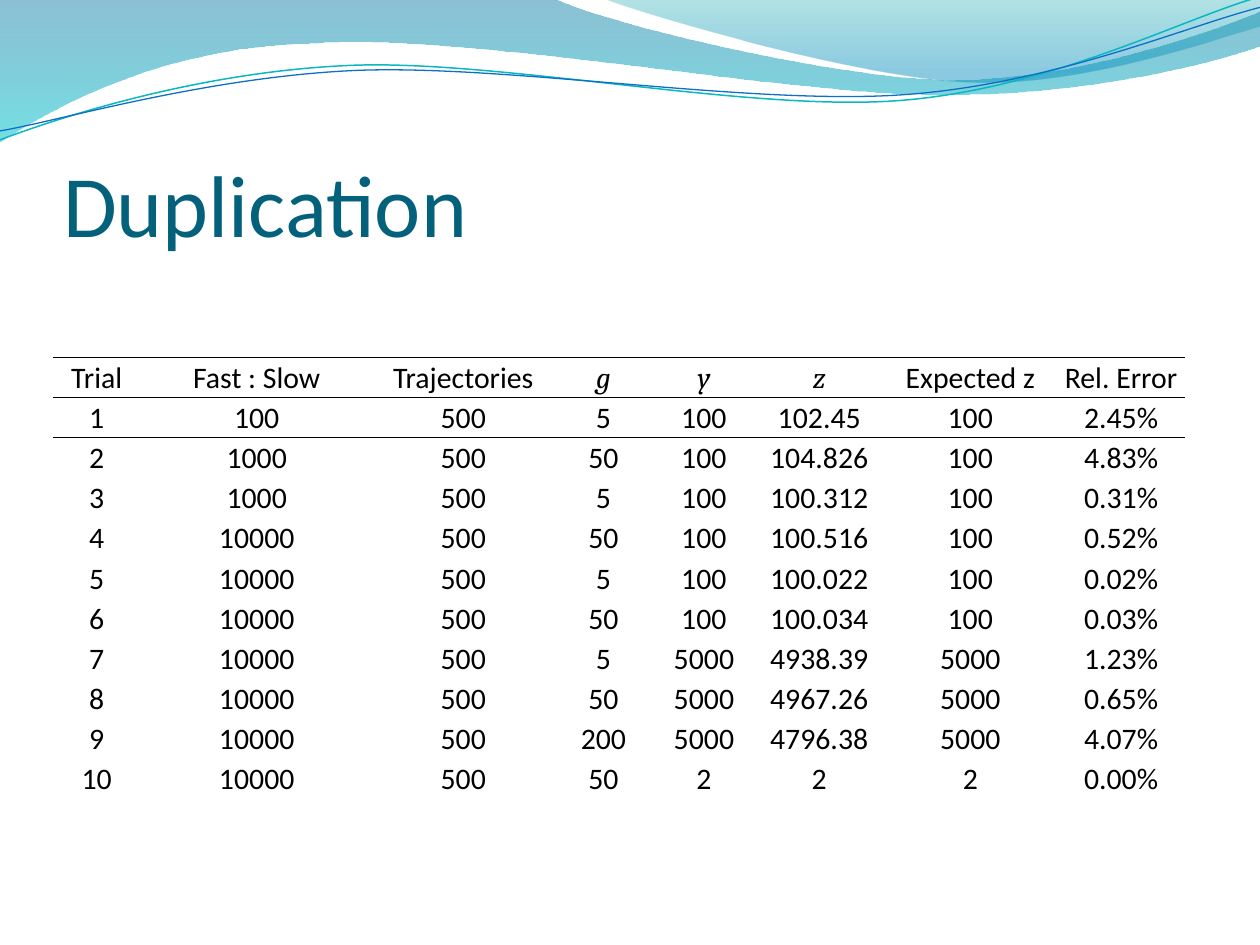
from dataclasses import dataclass

from lxml.etree import SubElement
from pptx import Presentation
from pptx.dml.color import RGBColor
from pptx.enum.text import MSO_ANCHOR, MSO_AUTO_SIZE, PP_ALIGN
from pptx.oxml.ns import qn
from pptx.util import Cm, Pt


@dataclass(frozen=True)
class Theme:
    title_color: str = "04617B"
    text_color: str = "000000"
    teal_line: str = "0AB8BF"
    blue_line: str = "0F6FC6"
    # Gradient stops: position, colour, opacity in percent
    band_stops: tuple = ((0, "0074A1", 45), (1, "00C6CF", 55))
    crest_stops: tuple = ((0, "00A1A9", 30), (0.8, "008BBF", 45))
    body_font: str = "Calibri"
    symbol_font: str = "Cambria"
    title_size: float = 50
    table_size: float = 17
    rule_width: float = 0.5


theme = Theme()
PLAIN_TABLE_STYLE = "{2D5ABB26-0587-4C30-8999-92F81FD0307C}"


def write(frame, text, *, size, color, font=theme.body_font, italic=False,
          align=PP_ALIGN.LEFT):
    para = frame.paragraphs[0]
    para.alignment = align
    span = para.add_run()
    span.text = text
    span.font.name = font
    span.font.size = Pt(size)
    span.font.bold = False
    span.font.italic = italic
    span.font.color.rgb = RGBColor.from_string(color)


def add_wave(page, start, segments, close):
    """Draw segments given in cm: two numbers make a line, six a cubic curve."""
    builder = page.shapes.build_freeform(Cm(start[0]), Cm(start[1]))
    for segment in segments:
        points = zip(segment[::2], segment[1::2])
        builder.add_line_segments([(Cm(x), Cm(y)) for x, y in points], close=False)
    if close:
        builder.add_line_segments([], close=True)
    wave = builder.convert_to_shape()
    wave.shadow.inherit = False

    # Merge each group of three points into one cubic curve
    outline = next(wave.element.iter(qn("a:path")))
    steps = iter(outline.findall(qn("a:lnTo")))
    for segment in segments:
        group = [next(steps) for _ in range(len(segment) // 2)]
        if len(group) == 3:
            curve = outline.makeelement(qn("a:cubicBezTo"))
            group[0].addprevious(curve)
            for step in group:
                curve.append(step[0])
                outline.remove(step)
    return wave


deck = Presentation()
deck.slide_width, deck.slide_height = Cm(25.4), Cm(19.05)
page = deck.slides.add_slide(deck.slide_layouts[5])

# Filled waves along the top
filled_waves = [
    (theme.band_stops, (0, 0), [
        (11.18, -0.03),
        (12.09, 0.43, 16.87, 1.6, 19.25, 1.6),
        (21.67, 1.6, 24.33, 0.66, 25.4, 0.23),
        (25.43, 0.91),
        (24.97, 1.12, 22.1, 1.93, 18.95, 1.91),
        (15.8, 1.91, 9.7, 0.71, 6.53, 0.86),
        (3.28, 0.91, 1.17, 2.11, -0.03, 2.87),
    ]),
    (theme.crest_stops, (12.17, -0.03), [
        (12.93, 0.28, 17.32, 1.57, 19.53, 1.65),
        (21.74, 1.75, 24.41, 0.81, 25.4, 0.53),
        (25.4, 0),
    ]),
]
waves = []
for stops, start, segments in filled_waves:
    wave = add_wave(page, start, segments, close=True)
    wave.line.fill.background()
    wave.fill.gradient()
    wave.fill.gradient_angle = 270  # counter-clockwise, so top to bottom
    for stop, (position, color, _) in zip(wave.fill.gradient_stops, stops):
        stop.position = position
        stop.color.rgb = RGBColor.from_string(color)
    for color_xml, (_, _, opacity) in zip(wave.element.spPr.iter(qn("a:srgbClr")), stops):
        SubElement(color_xml, qn("a:alpha"), val=str(opacity * 1000))
    waves.append(wave)

# Thin lines that follow the waves
line_waves = [
    (theme.teal_line, 0.85, (0, 2.82), [
        (1.22, 2.36, 4.01, 1.45, 7.04, 1.32),
        (10.03, 1.19, 15.06, 2.26, 18.11, 2.03),
        (21.16, 1.8, 23.83, 0.38, 25.35, -0.05),
    ]),
    (theme.blue_line, 0.75, (0, 2.64), [
        (1.19, 2.44, 4.17, 1.55, 7.19, 1.42),
        (10.24, 1.3, 15.16, 2.13, 18.21, 1.91),
        (21.23, 1.7, 23.9, 0.53, 25.4, 0.15),
    ]),
]
for color, width, start, segments in line_waves:
    wave = add_wave(page, start, segments, close=False)
    wave.fill.background()
    wave.line.color.rgb = RGBColor.from_string(color)
    wave.line.width = Pt(width)
    waves.append(wave)

# The waves belong to the slide master, behind its placeholders
master_tree = deck.slide_master.shapes.element
for index, wave in enumerate(waves):
    wave.element.nvSpPr.cNvPr.set("id", str(20 + index))
    master_tree.insert(2 + index, wave.element)

# Title
title = page.shapes.title
title.left, title.top, title.width, title.height = Cm(1.27), Cm(1.96), Cm(22.86), Cm(3.18)
frame = title.text_frame
frame.word_wrap = True
frame.auto_size = MSO_AUTO_SIZE.NONE
frame.vertical_anchor = MSO_ANCHOR.BOTTOM
frame.margin_left = frame.margin_right = frame.margin_bottom = 0
frame.margin_top = Cm(0.13)
write(frame, "Duplication", size=theme.title_size, color=theme.title_color)

# Trial results
header = ["Trial", "Fast : Slow", "Trajectories", "g", "y", "z", "Expected z", "Rel. Error"]
symbols = {"g", "y", "z"}
trials = [
    ("1", "100", "500", "5", "100", "102.45", "100", "2.45%"),
    ("2", "1000", "500", "50", "100", "104.826", "100", "4.83%"),
    ("3", "1000", "500", "5", "100", "100.312", "100", "0.31%"),
    ("4", "10000", "500", "50", "100", "100.516", "100", "0.52%"),
    ("5", "10000", "500", "5", "100", "100.022", "100", "0.02%"),
    ("6", "10000", "500", "50", "100", "100.034", "100", "0.03%"),
    ("7", "10000", "500", "5", "5000", "4938.39", "5000", "1.23%"),
    ("8", "10000", "500", "50", "5000", "4967.26", "5000", "0.65%"),
    ("9", "10000", "500", "200", "5000", "4796.38", "5000", "4.07%"),
    ("10", "10000", "500", "50", "2", "2", "2", "0.00%"),
]
rows = [header, *trials]
column_widths = [1.78, 4.67, 3.66, 1.99, 2.06, 2.59, 3.5, 2.58]
table_height = 8.89
row_height = table_height / len(rows)
table = page.shapes.add_table(
    len(rows), len(header), Cm(1.06), Cm(7.2),
    Cm(sum(column_widths)), Cm(table_height)).table
table.first_row = table.horz_banding = False
table._tbl.tblPr.find(qn("a:tableStyleId")).text = PLAIN_TABLE_STYLE
for column, width in zip(table.columns, column_widths):
    column.width = Cm(width)

for row_index, values in enumerate(rows):
    table.rows[row_index].height = Cm(row_height)
    rules = {0: ("a:lnT", "a:lnB"), 1: ("a:lnT",)}.get(row_index, ())
    for column_index, value in enumerate(values):
        cell = table.cell(row_index, column_index)
        cell.margin_left = cell.margin_right = cell.margin_top = Cm(0.05)
        cell.margin_bottom = 0
        cell.vertical_anchor = MSO_ANCHOR.MIDDLE
        is_symbol = value in symbols
        write(cell.text_frame, value, size=theme.table_size, color=theme.text_color,
              font=theme.symbol_font if is_symbol else theme.body_font,
              italic=is_symbol, align=PP_ALIGN.CENTER)
        for side in rules:
            border = SubElement(cell._tc.get_or_add_tcPr(), qn(side),
                                w=str(Pt(theme.rule_width)))
            fill = SubElement(border, qn("a:solidFill"))
            SubElement(fill, qn("a:srgbClr"), val=theme.text_color)
        cell.fill.background()

deck.save("out.pptx")
